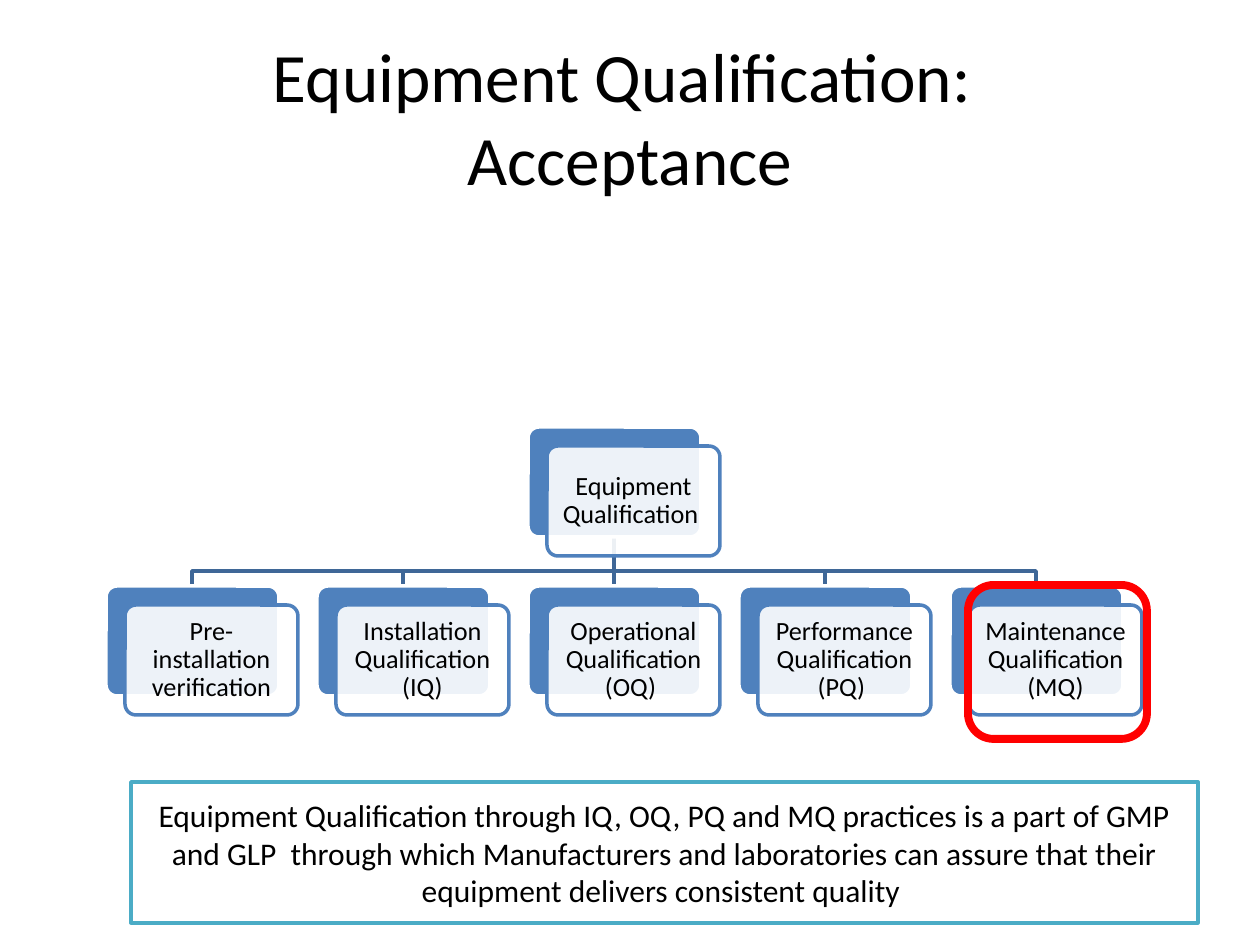
"""Build the equipment qualification acceptance slide."""
from lxml import etree
from pptx import Presentation
from pptx.dml.color import RGBColor
from pptx.enum.shapes import MSO_CONNECTOR, MSO_SHAPE
from pptx.enum.text import MSO_ANCHOR, PP_ALIGN
from pptx.oxml.ns import qn
from pptx.util import Emu, Pt

ROUNDED, RECTANGLE = MSO_SHAPE.ROUNDED_RECTANGLE, MSO_SHAPE.RECTANGLE
STRAIGHT = MSO_CONNECTOR.STRAIGHT
CENTER, MIDDLE = PP_ALIGN.CENTER, MSO_ANCHOR.MIDDLE

SCALE = 914400 / 126
TITLE_ONLY = 5
BLUE, LINK_BLUE, TEAL = "4F81BD", "3F6797", "4BACC6"
WHITE, BLACK, RED = "FFFFFF", "000000", "FF0000"

CARD_WIDTH, CARD_HEIGHT, CARD_OFFSET, CARD_INSET = 173, 110, 19, 11
FIRST_LEFT, COLUMN_STEP = 106, 211
ROOT_COLUMN, ROOT_TOP, ROW_TOP = 2, 427, 586
LINK_TOP, LINK_BEND = 537, 571
STAGES = [
    "Pre-installation verification",
    "Installation Qualification (IQ)",
    "Operational Qualification (OQ) ",
    "Performance Qualification (PQ) ",
    "Maintenance Qualification (MQ)",
]
SUMMARY = (
    "Equipment Qualification through IQ, OQ, PQ and MQ practices is a part of GMP "
    "and GLP  through which Manufacturers and laboratories can assure that their "
    "equipment delivers consistent quality "
)


def px(length):
    return Emu(round(length * SCALE))


def color(value):
    return RGBColor.from_string(value)


def write(frame, text, size, font="Calibri", ink=BLACK, spacing=None, inset=None):
    frame.word_wrap = True
    frame.vertical_anchor = MIDDLE
    if inset is not None:
        frame.margin_left = frame.margin_right = px(inset)
        frame.margin_top = frame.margin_bottom = px(inset)
    para = frame.paragraphs[0]
    para.text = text
    para.alignment = CENTER
    if spacing is not None:
        para.line_spacing = spacing
    for span in para.runs:
        span.font.name = font
        span.font.size = Pt(size)
        span.font.color.rgb = color(ink)


class ChartSlide:
    def __init__(self, page, line_width=2):
        self.page = page
        self.line_width = line_width

    def title(self, text, left, top, width, height, size):
        box = self.page.shapes.title
        box.left, box.top, box.width, box.height = map(px, (left, top, width, height))
        write(box.text_frame, text, size)

    def box(self, kind, left, top, width, height, line, fill=None,
            line_width=None, radius=None, opacity=None):
        box = self.page.shapes.add_shape(kind, *map(px, (left, top, width, height)))
        box.shadow.inherit = False
        if radius is not None:
            box.adjustments[0] = radius
        if fill is None:
            box.fill.background()
        else:
            box.fill.solid()
            box.fill.fore_color.rgb = color(fill)
        if opacity is not None:
            tint = box.fill._xPr.find(".//" + qn("a:srgbClr"))
            etree.SubElement(tint, qn("a:alpha"), val=str(opacity * 1000))
        box.line.color.rgb = color(line)
        box.line.width = Pt(line_width or self.line_width)
        return box

    def card(self, text, left, top):
        size = (CARD_WIDTH, CARD_HEIGHT)
        self.box(ROUNDED, left, top, *size, WHITE, fill=BLUE, radius=0.1)
        front = self.box(ROUNDED, left + CARD_OFFSET, top + CARD_OFFSET, *size, BLUE,
                         fill=WHITE, radius=0.1, opacity=90)
        write(front.text_frame, text, 15, spacing=0.9, inset=CARD_INSET)

    def link(self, start, end):
        if start == end:
            link = self.page.shapes.add_connector(
                STRAIGHT, *map(px, (start, LINK_TOP, end, ROW_TOP)))
            etree.SubElement(link._element.spPr, qn("a:effectLst"))
        else:
            outline = self.page.shapes.build_freeform(start, LINK_TOP, scale=SCALE)
            outline.add_line_segments(
                [(start, LINK_BEND), (end, LINK_BEND), (end, ROW_TOP)], close=False)
            link = outline.convert_to_shape()
            link.fill.background()
            link.shadow.inherit = False
        link.line.color.rgb = color(LINK_BLUE)
        link.line.width = Pt(self.line_width)


def main():
    deck = Presentation()
    deck.slide_width, deck.slide_height = px(1260), px(945)
    slide = ChartSlide(deck.slides.add_slide(deck.slide_layouts[TITLE_ONLY]))
    slide.title("Equipment Qualification: \vAcceptance", 63, 38, 1134, 157, 39.6)

    lefts = [FIRST_LEFT + COLUMN_STEP * column for column in range(len(STAGES))]
    root_left = lefts[ROOT_COLUMN]
    half = CARD_WIDTH // 2
    for left in lefts:
        slide.link(root_left + half, left + half)
    slide.card("Equipment Qualification ", root_left, ROOT_TOP)
    for stage, left in zip(STAGES, lefts):
        slide.card(stage, left, ROW_TOP)

    summary = slide.box(RECTANGLE, 131, 782, 1067, 141, TEAL, fill=WHITE)
    write(summary.text_frame, SUMMARY, 18)
    slide.box(ROUNDED, 968, 585, 179, 154, RED, line_width=4.5)
    deck.save("out.pptx")


if __name__ == "__main__":
    main()
